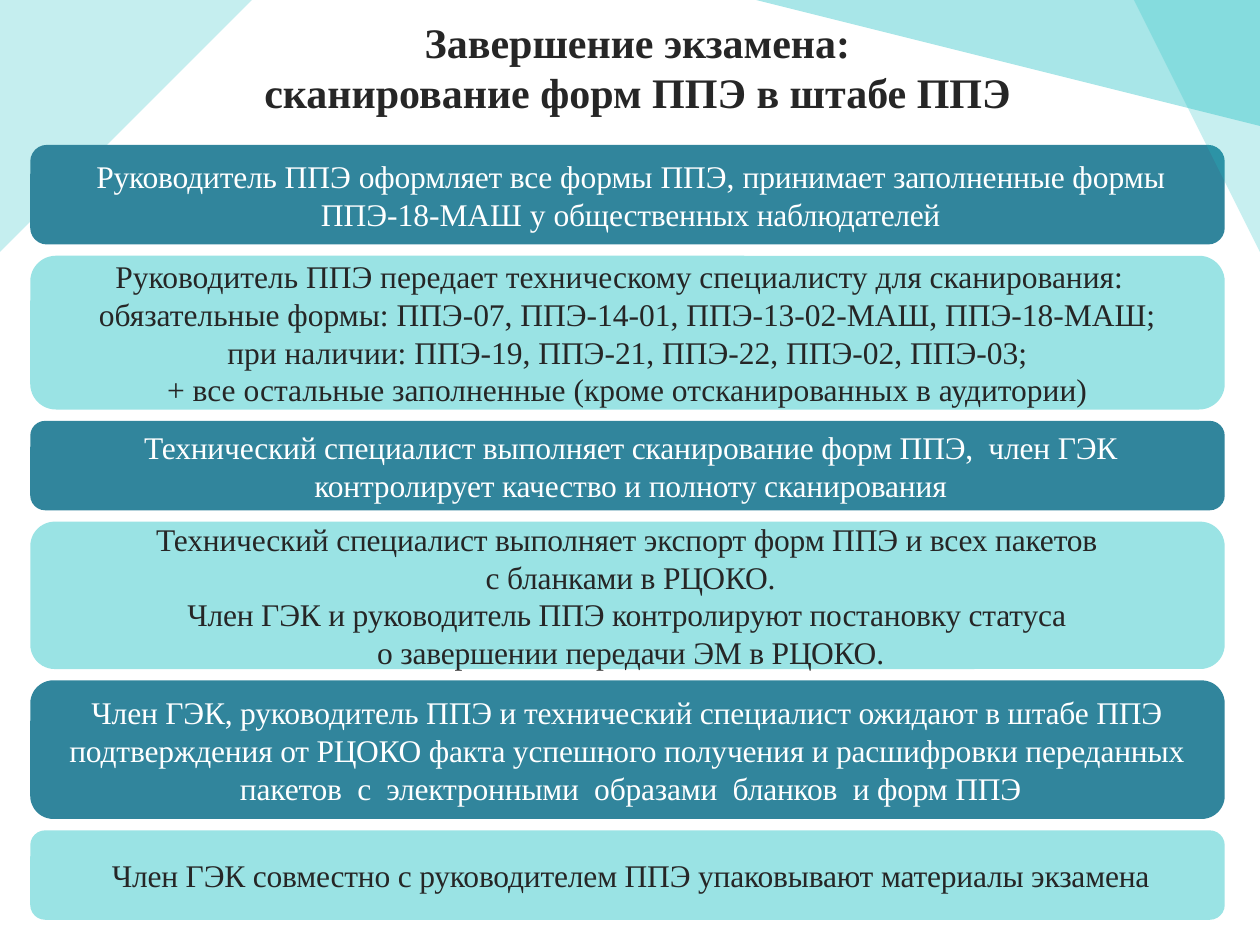
from lxml import etree
from pptx import Presentation
from pptx import util as u
from pptx.dml.color import RGBColor
from pptx.enum import shapes, text
from pptx.oxml import ns

AQUA = RGBColor(0x20, 0xC0, 0xC4)
TEAL = RGBColor(0x31, 0x85, 0x9C)
MINT = RGBColor(0x9A, 0xE3, 0xE4)
DARK = RGBColor(0x26, 0x26, 0x26)
WHITE = RGBColor(0xFF, 0xFF, 0xFF)

TITLE = "Завершение экзамена:\nсканирование форм ППЭ в штабе ППЭ"
LEFT, FIRST_TOP, WIDTH, GAP = 0.24, 1.15, 9.48, 0.09
TIGHT = -0.1

STEPS = [
    (0.79, 0.05, [[
        ("Руководитель ", TIGHT), ("ППЭ ", 0), ("оформляет все ", TIGHT),
        ("формы ППЭ, ", 0), ("принимает заполненные ", TIGHT),
        ("формы ППЭ-18-МАШ у ", 0), ("общественных ", TIGHT),
        ("наблюдателей", -0.2)]]),
    (1.22, 0, [
        [("Руководитель ППЭ передает техническому специалисту для сканирования:  \n"
          "обязательные формы: ППЭ-07, ППЭ-14-01, ППЭ-13-02-МАШ, ППЭ-18-МАШ;", 0)],
        [("при наличии: ППЭ-19, ППЭ-21, ППЭ-22, ППЭ-02, ППЭ-03;", 0)],
        [("+ все остальные заполненные (кроме отсканированных в аудитории)", 0)]]),
    (0.71, 0.05, [[
        ("Технический специалист выполняет сканирование форм ППЭ,  член ГЭК "
         "контролирует качество и полноту сканирования", TIGHT)]]),
    (1.17, 0.05, [
        [("Технический специалист выполняет экспорт форм ППЭ и всех пакетов \n"
          "с бланками в РЦОКО.", TIGHT)],
        [("Член ГЭК и руководитель ППЭ контролируют постановку статуса \n"
          "о завершении передачи ЭМ в РЦОКО.", TIGHT)]]),
    (1.1, 0.05, [[
        ("Член ГЭК, руководитель ППЭ и технический специалист ожидают в штабе ППЭ  "
         "подтверждения от РЦОКО факта успешного получения и расшифровки переданных  "
         "пакетов  с  электронными  образами  бланков  и форм ППЭ", TIGHT)]]),
    (0.71, 0.05, [[
        ("Член ГЭК совместно с руководителем ППЭ упаковывают материалы экзамена",
         TIGHT)]]),
]

LEFT_CORNER = [(0, 1.77), (0.25, 1.86), (2.14, 0.01), (0.01, 0.01), (0.01, 1.78)]
TOP_WEDGE = [(5.73, -0.02), (10.03, 0.93), (10.03, -0.03)]
RIGHT_CORNER = [(10.04, 1.73), (9.9, 1.83), (8.86, -0.03), (10.03, -0.03), (10.03, 1.75)]


class SlideBuilder:
    """Draws styled elements on the current slide."""

    font_name = "Times New Roman"

    def __init__(self, slide):
        self.slide = slide

    def runs(self, paragraph, runs, size, color, bold=False):
        paragraph.alignment = text.PP_ALIGN.CENTER
        for content, spacing in runs:
            for index, line in enumerate(content.split("\n")):
                if index:
                    paragraph.add_line_break()
                run = paragraph.add_run()
                run.text = line
                run.font.name = self.font_name
                run.font.size = u.Pt(size)
                run.font.bold = bold
                run.font.color.rgb = color
                if spacing:
                    run._r.get_or_add_rPr().set("spc", str(round(spacing * 100)))

    def title(self, content, left, top, width, height):
        title = self.slide.shapes.title
        title.left, title.top = u.Inches(left), u.Inches(top)
        title.width, title.height = u.Inches(width), u.Inches(height)
        title.text_frame.vertical_anchor = text.MSO_ANCHOR.MIDDLE
        self.runs(title.text_frame.paragraphs[0], [(content, 0)], 24, DARK, bold=True)

    def polygon(self, points, opacity):
        builder = self.slide.shapes.build_freeform(*points[0], scale=u.Inches(1))
        builder.add_line_segments(points[1:], close=True)
        shape = builder.convert_to_shape()
        shape.shadow.inherit = False
        shape.line.fill.background()
        shape.fill.solid()
        shape.fill.fore_color.rgb = AQUA
        color = shape._element.spPr.find(".//" + ns.qn("a:srgbClr"))
        etree.SubElement(color, ns.qn("a:alpha"), val=str(opacity * 1000))

    def box(self, top, height, indent, paragraphs, fill, color):
        shape = self.slide.shapes.add_shape(
            shapes.MSO_SHAPE.ROUNDED_RECTANGLE,
            u.Inches(LEFT), u.Inches(top), u.Inches(WIDTH), u.Inches(height))
        shape.shadow.inherit = False
        shape.line.fill.background()
        shape.fill.solid()
        shape.fill.fore_color.rgb = fill
        frame = shape.text_frame
        frame.word_wrap = True
        frame.vertical_anchor = text.MSO_ANCHOR.MIDDLE
        for index, runs in enumerate(paragraphs):
            paragraph = frame.add_paragraph() if index else frame.paragraphs[0]
            paragraph._p.get_or_add_pPr().set("marL", str(u.Inches(indent)))
            self.runs(paragraph, runs, 18, color)


def main():
    presentation = Presentation()
    presentation.slide_width, presentation.slide_height = u.Inches(10), u.Inches(7.5)
    slide = presentation.slides.add_slide(presentation.slide_layouts[5])
    builder = SlideBuilder(slide)

    builder.polygon(LEFT_CORNER, 26)
    builder.title(TITLE, 0.16, 0.05, 9.8, 0.96)
    top = FIRST_TOP
    for index, (height, indent, paragraphs) in enumerate(STEPS):
        fill, color = (MINT, DARK) if index % 2 else (TEAL, WHITE)
        builder.box(top, height, indent, paragraphs, fill, color)
        top += height + GAP
    builder.polygon(TOP_WEDGE, 39)
    builder.polygon(RIGHT_CORNER, 25)

    presentation.save("out.pptx")


if __name__ == "__main__":
    main()
